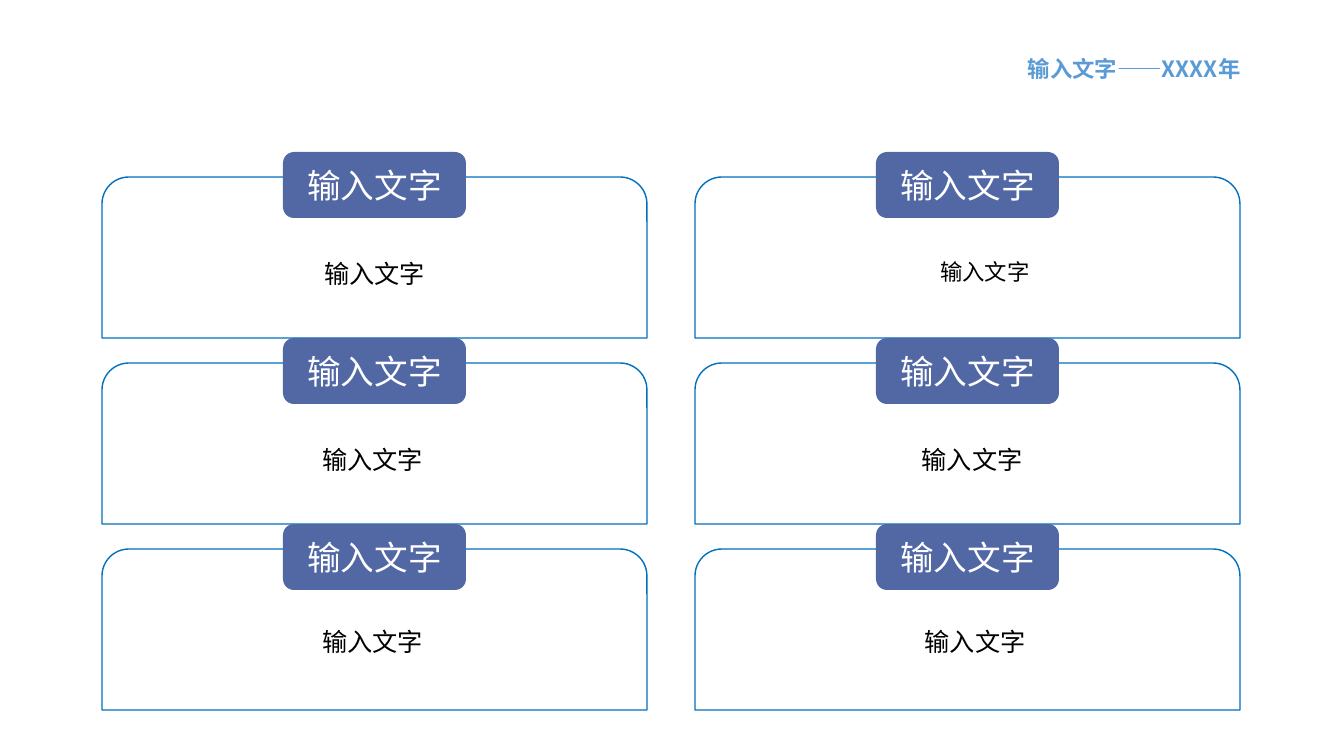
from pptx import Presentation
from pptx.dml.color import RGBColor
from pptx.enum.shapes import MSO_SHAPE
from pptx.enum.text import MSO_ANCHOR, MSO_AUTO_SIZE, PP_ALIGN
from pptx.oxml.ns import qn
from pptx.util import Pt
from lxml.etree import SubElement

PX = 914400 / 100.8
CARD_LINE = RGBColor(0x00, 0x70, 0xC0)
TAB_FILL = RGBColor(0x52, 0x68, 0xA5)
HEADER_BLUE = RGBColor(0x5B, 0x9B, 0xD5)
BLACK = RGBColor(0x00, 0x00, 0x00)
WHITE = RGBColor(0xFF, 0xFF, 0xFF)
CJK = "Noto Sans CJK SC"


def px(*lengths):
    return [round(n * PX) for n in lengths]


def write(sp, text, size, color, font="Arial", bold=False, align=PP_ALIGN.CENTER,
          anchor=MSO_ANCHOR.TOP, wrap=True, spacing=None, fit=True):
    tf = sp.text_frame
    tf.word_wrap = wrap
    tf.vertical_anchor = anchor
    if fit:
        tf.auto_size = MSO_AUTO_SIZE.SHAPE_TO_FIT_TEXT
    p = tf.paragraphs[0]
    p.alignment = align
    if spacing:
        p.line_spacing = spacing
    r = p.add_run()
    r.text = text
    r.font.size = Pt(size)
    r.font.bold = bold
    r.font.color.rgb = color
    r.font.name = font
    SubElement(r.font._element, qn("a:ea"), typeface=CJK)


prs = Presentation()
prs.slide_width, prs.slide_height = px(1344, 756)
s = prs.slides.add_slide(prs.slide_layouts[6])

# Grid of three rows and two columns
cells = [(102 + 593 * col, 177 + 186 * row) for col in range(2) for row in range(3)]

# Outlined cards
for x, y in cells:
    sp = s.shapes.add_shape(MSO_SHAPE.ROUND_2_SAME_RECTANGLE, *px(x, y, 545, 161))
    sp.shadow.inherit = False
    sp.fill.background()
    sp.line.color.rgb = CARD_LINE
    sp.line.width = Pt(1)

# Heading tabs over the top edge of each card
for x, y in cells:
    sp = s.shapes.add_shape(MSO_SHAPE.ROUNDED_RECTANGLE, *px(x + 181, y - 25, 183, 66))
    sp.shadow.inherit = False
    sp.fill.solid()
    sp.fill.fore_color.rgb = TAB_FILL
    sp.line.fill.background()
    write(sp, "输入文字", 24, WHITE, font=CJK, anchor=MSO_ANCHOR.MIDDLE, fit=False)

# Card texts
bodies = [
    ((314, 253, 121, 40), "输入文字", 18, False, None),
    ((312, 439, 121, 40), "输入文字", 18, False, None),
    ((312, 621, 121, 40), "输入文字", 18, False, None),
    ((930, 253, 110, 37), "输入文字", 16, False, None),
    ((835, 424, 280, 55), "输入文字 ", 18, True, 1.5),
    ((770, 621, 410, 40), "输入文字", 18, True, None),
]
for box, text, size, wrap, spacing in bodies:
    sp = s.shapes.add_textbox(*px(*box))
    write(sp, text, size, BLACK, wrap=wrap, spacing=spacing)

# Header at the top right
sp = s.shapes.add_textbox(*px(1018, 50, 243, 37))
write(sp, "输入文字——XXXX年", 16, HEADER_BLUE, font=CJK, bold=True,
      align=PP_ALIGN.LEFT, wrap=False)

prs.save("out.pptx")
